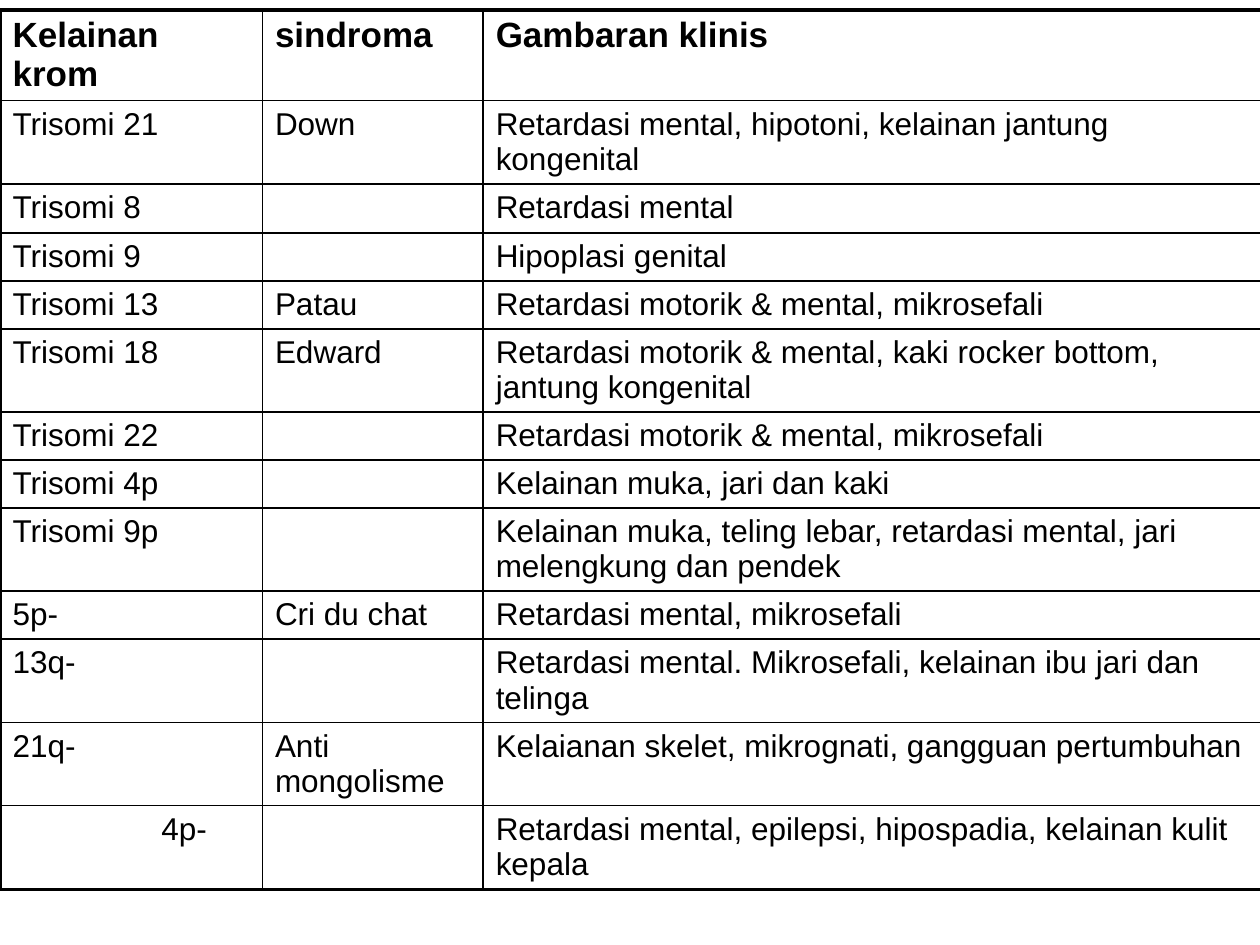
import pptx
import pptx.dml.color
import pptx.oxml.ns
import pptx.util
import lxml.etree

Cm = pptx.util.Cm
Pt = pptx.util.Pt
BLACK = pptx.dml.color.RGBColor(0, 0, 0)
THIN, THICK = 1, 2.25

WIDTHS = [5.29, 4.45, 15.78]
# Row height in cm, then the three cell texts
ROWS = [
    (1.07, "Kelainan krom", "sindroma", "Gambaran klinis"),
    (1.45, "Trisomi 21", "Down", "Retardasi mental, hipotoni, kelainan jantung kongenital"),
    (0.99, "Trisomi 8", "", "Retardasi mental"),
    (0.76, "Trisomi 9", "", "Hipoplasi genital"),
    (0.81, "Trisomi 13", "Patau", "Retardasi motorik & mental, mikrosefali"),
    (1.5, "Trisomi 18", "Edward",
     "Retardasi motorik & mental, kaki rocker bottom, jantung kongenital"),
    (0.76, "Trisomi 22", "", "Retardasi motorik & mental, mikrosefali"),
    (0.81, "Trisomi 4p", "", "Kelainan muka, jari dan kaki"),
    (1.5, "Trisomi 9p", "",
     "Kelainan muka, teling lebar, retardasi mental, jari melengkung dan pendek"),
    (0.79, "5p-", "Cri du chat", "Retardasi mental, mikrosefali"),
    (1.68, "13q-", "", "Retardasi mental. Mikrosefali, kelainan ibu jari dan telinga"),
    (1.57, "21q-", "Anti mongolisme", "Kelaianan skelet, mikrognati, gangguan pertumbuhan"),
    (1.7, "4p-", "", "Retardasi mental, epilepsi, hipospadia, kelainan kulit kepala"),
]


def add_edge(cell, side, width):
    """Draw one solid cell border; side is L, R, T or B."""
    qn = pptx.oxml.ns.qn
    line = lxml.etree.SubElement(cell._tc.get_or_add_tcPr(), qn("a:ln" + side),
                                 w=str(Pt(width)))
    fill = lxml.etree.SubElement(line, qn("a:solidFill"))
    lxml.etree.SubElement(fill, qn("a:srgbClr"), val=str(BLACK))


deck = pptx.Presentation()
deck.slide_width = Cm(25.4)
deck.slide_height = Cm(19.05)
slide = deck.slides.add_slide(deck.slide_layouts[6])

last_row, last_col = len(ROWS) - 1, len(WIDTHS) - 1
frame = slide.shapes.add_table(len(ROWS), len(WIDTHS), Cm(0), Cm(0.2),
                               Cm(25.52), Cm(18.72))
table = frame.table
table.first_row = False
table.horz_banding = False
for col, width in zip(table.columns, WIDTHS):
    col.width = Cm(width)

for r, (height, *texts) in enumerate(ROWS):
    table.rows[r].height = Cm(height)
    for c, text in enumerate(texts):
        cell = table.cell(r, c)
        outer = {"L": c == 0, "R": c == last_col, "T": r == 0, "B": r == last_row}
        for side, thick in outer.items():
            add_edge(cell, side, THICK if thick else THIN)
        cell.fill.background()
        cell.text = text
        font = cell.text_frame.paragraphs[0].font
        font.name = "Arial"
        font.size = Pt(20 if r == 0 else 18)
        font.bold = r == 0
        font.color.rgb = BLACK

# The last label is set in from the left
label = table.cell(last_row, 0).text_frame.paragraphs[0]
label._p.get_or_add_pPr().set("marL", str(Cm(3)))

deck.save("out.pptx")
